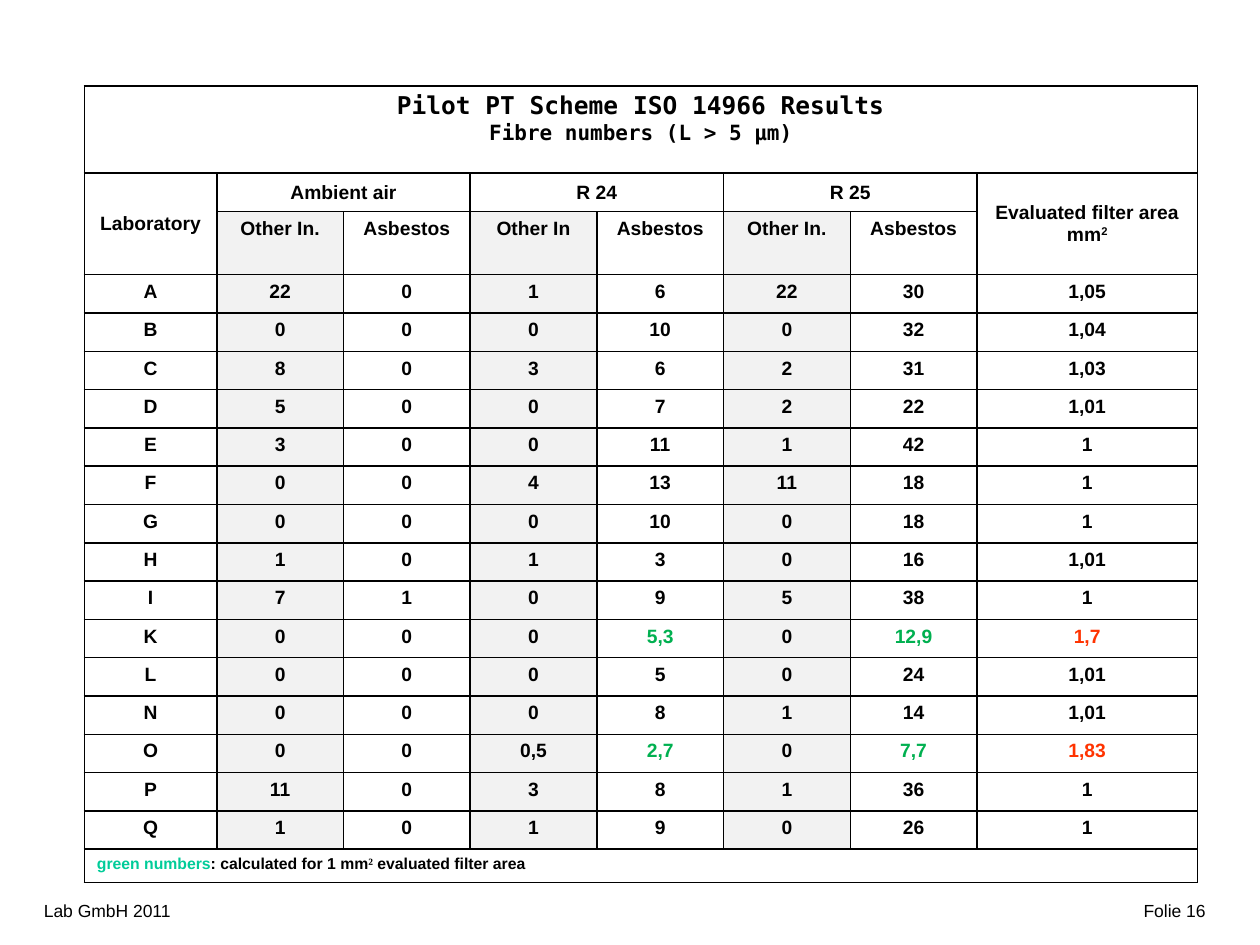
from lxml.etree import SubElement
from pptx import Presentation
from pptx.dml.color import RGBColor
from pptx.enum.text import MSO_ANCHOR, PP_ALIGN
from pptx.oxml.ns import qn
from pptx.util import Pt

BLACK = RGBColor(0x00, 0x00, 0x00)
WHITE = RGBColor(0xFF, 0xFF, 0xFF)
GREY = RGBColor(0xF2, 0xF2, 0xF2)
GREEN = RGBColor(0x00, 0xB0, 0x50)
RED = RGBColor(0xFF, 0x33, 0x00)
TEAL = RGBColor(0x00, 0xCC, 0x99)

SANS, MONO, SERIF = "Arial", "DejaVu Sans Mono", "Times New Roman"

SAMPLES = ["Ambient air", "R 24", "R 25"]
FIBRE_TYPES = ["Other In.", "Asbestos", "Other In", "Asbestos", "Other In.", "Asbestos"]
RESULTS = [
    ("A", "22", "0", "1", "6", "22", "30", "1,05"),
    ("B", "0", "0", "0", "10", "0", "32", "1,04"),
    ("C", "8", "0", "3", "6", "2", "31", "1,03"),
    ("D", "5", "0", "0", "7", "2", "22", "1,01"),
    ("E", "3", "0", "0", "11", "1", "42", "1"),
    ("F", "0", "0", "4", "13", "11", "18", "1"),
    ("G", "0", "0", "0", "10", "0", "18", "1"),
    ("H", "1", "0", "1", "3", "0", "16", "1,01"),
    ("I", "7", "1", "0", "9", "5", "38", "1"),
    ("K", "0", "0", "0", "5,3", "0", "12,9", "1,7"),
    ("L", "0", "0", "0", "5", "0", "24", "1,01"),
    ("N", "0", "0", "0", "8", "1", "14", "1,01"),
    ("O", "0", "0", "0,5", "2,7", "0", "7,7", "1,83"),
    ("P", "11", "0", "3", "8", "1", "36", "1"),
    ("Q", "1", "0", "1", "9", "0", "26", "1"),
]
RECALCULATED_LABS = {"K", "O"}
RECALCULATED_COLORS = {4: GREEN, 6: GREEN, 7: RED}

COL_WIDTHS = [75.7] + [72.4] * 6 + [126]
ROW_HEIGHTS = [50, 22, 36] + [21.9] * len(RESULTS) + [19.2]


def add_text(p, text, size=11, font=SANS, color=BLACK, bold=True, align=None, baseline=None):
    """Append a run to paragraph p; baseline is a percentage above the line."""
    if align is not None:
        p.alignment = align
    r = p.add_run()
    r.text = text
    r.font.size, r.font.name, r.font.bold = Pt(size), font, bold
    r.font.color.rgb = color
    if baseline:
        r.font._element.set("baseline", str(baseline * 1000))


def add_footer(slide, text, left, top, width, height, align, anchor):
    tf = slide.shapes.add_textbox(Pt(left), Pt(top), Pt(width), Pt(height)).text_frame
    tf.word_wrap = True
    tf.vertical_anchor = anchor
    add_text(tf.paragraphs[0], text, size=10, bold=False, align=align)


def set_borders(cell, top=1, bottom=1):
    tc_pr = cell._tc.get_or_add_tcPr()
    widths = {"a:lnL": 1, "a:lnR": 1, "a:lnT": top, "a:lnB": bottom}
    for i, (tag, width) in enumerate(widths.items()):
        ln = SubElement(tc_pr, qn(tag), w=str(Pt(width)))
        fill = SubElement(ln, qn("a:solidFill"))
        SubElement(fill, qn("a:srgbClr"), val=str(BLACK))
        tc_pr.insert(i, ln)


def fill_cell(cell, color):
    cell.fill.solid()
    cell.fill.fore_color.rgb = color


def write_cell(cell, text, **fmt):
    add_text(cell.text_frame.paragraphs[0], text, align=PP_ALIGN.CENTER, **fmt)


def merge_header(table, first, last, text):
    cell = table.cell(*first)
    cell.merge(table.cell(*last))
    cell.vertical_anchor = MSO_ANCHOR.MIDDLE
    write_cell(cell, text)
    return cell


def add_grid(slide):
    """Add the empty table with its sizes, fills and borders."""
    table = slide.shapes.add_table(
        len(ROW_HEIGHTS), len(COL_WIDTHS), Pt(48.2), Pt(49),
        Pt(sum(COL_WIDTHS)), Pt(sum(ROW_HEIGHTS))).table
    table.first_row = table.horz_banding = False
    for col, width in zip(table.columns, COL_WIDTHS):
        col.width = Pt(width)
    last_row = len(ROW_HEIGHTS) - 1
    for i, height in enumerate(ROW_HEIGHTS):
        table.rows[i].height = Pt(height)
        for j in range(len(COL_WIDTHS)):
            cell = table.cell(i, j)
            is_sample = 1 <= j <= 6
            shaded = 2 <= i < last_row and is_sample and j % 2 == 1
            fill_cell(cell, GREY if shaded else WHITE)
            set_borders(cell, top=0.75 if i == 2 and is_sample else 1,
                        bottom=0.75 if i == 1 and is_sample else 1)
    return table


def write_headers(table):
    title = table.cell(0, 0)
    title.merge(table.cell(0, 7))
    write_cell(title, "Pilot PT Scheme ISO 14966 Results", size=14, font=MONO)
    add_text(title.text_frame.add_paragraph(), "Fibre numbers (L > 5 µm)",
             size=12, font=MONO, align=PP_ALIGN.CENTER)
    merge_header(table, (1, 0), (2, 0), "Laboratory")
    for k, sample in enumerate(SAMPLES):
        merge_header(table, (1, 2 * k + 1), (1, 2 * k + 2), sample)
    area = merge_header(table, (1, 7), (2, 7), "Evaluated filter area mm")
    add_text(area.text_frame.paragraphs[0], "2", baseline=30)
    for j, fibre_type in enumerate(FIBRE_TYPES, start=1):
        write_cell(table.cell(2, j), fibre_type)


def write_results(table):
    for i, result in enumerate(RESULTS, start=3):
        colors = RECALCULATED_COLORS if result[0] in RECALCULATED_LABS else {}
        for j, value in enumerate(result):
            write_cell(table.cell(i, j), value, color=colors.get(j, BLACK))


def write_note(table):
    row = len(ROW_HEIGHTS) - 1
    note = table.cell(row, 0)
    note.merge(table.cell(row, 7))
    p = note.text_frame.paragraphs[0]
    add_text(p, "green numbers", size=9, color=TEAL)
    add_text(p, ": calculated for 1 mm", size=9)
    add_text(p, "²", size=9, font=SERIF)
    add_text(p, " evaluated filter area", size=9)


def main():
    prs = Presentation()
    prs.slide_width, prs.slide_height = Pt(720), Pt(540)
    slide = prs.slides.add_slide(prs.slide_layouts[6])
    add_footer(slide, "Folie 16", 552, 511, 144, 19.4, PP_ALIGN.RIGHT, MSO_ANCHOR.TOP)
    add_footer(slide, "Lab GmbH 2011", 18, 500, 150, 30, PP_ALIGN.LEFT, MSO_ANCHOR.BOTTOM)
    table = add_grid(slide)
    write_headers(table)
    write_results(table)
    write_note(table)
    prs.save("out.pptx")


if __name__ == "__main__":
    main()
